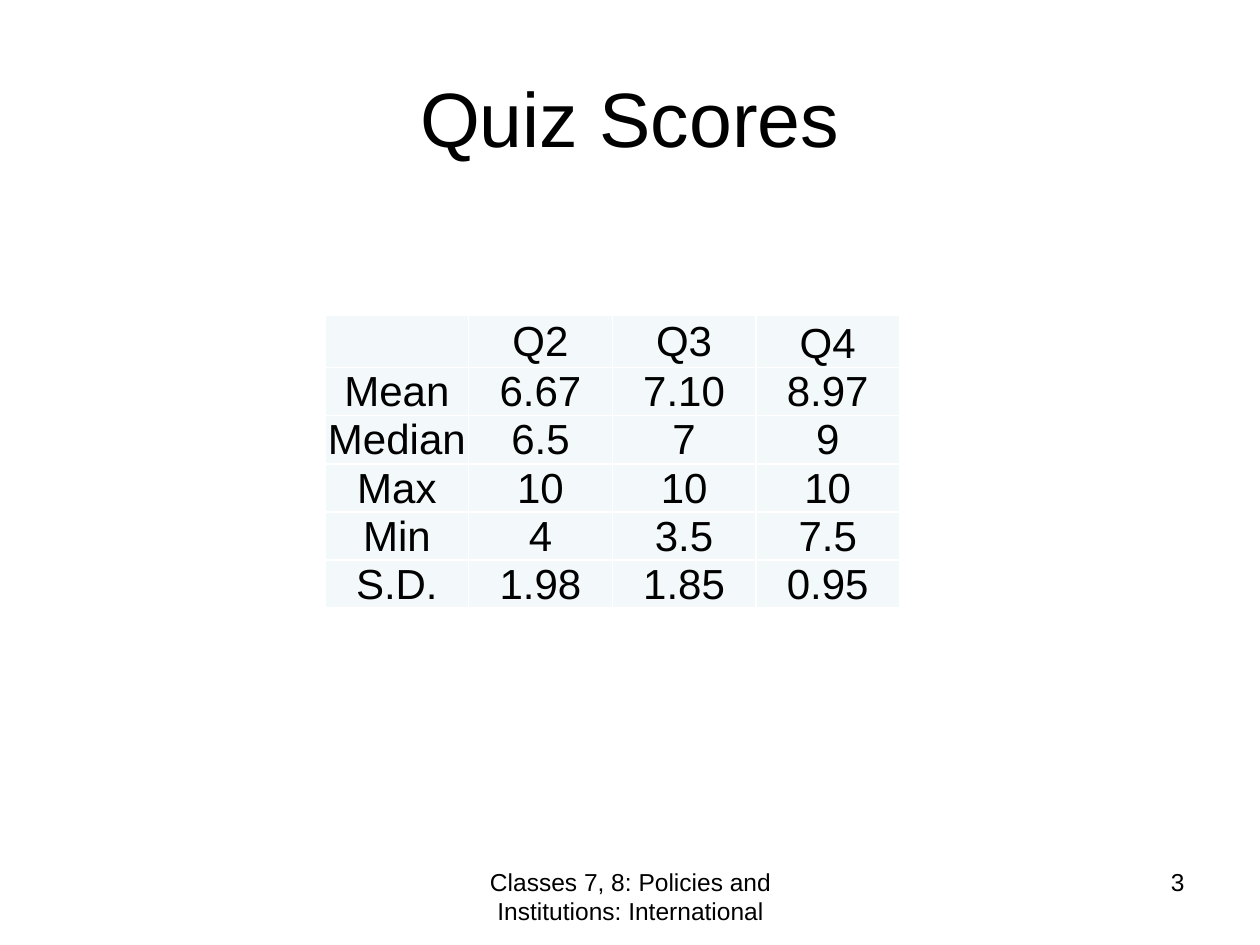
"""Build the quiz scores slide with its statistics table."""
from dataclasses import dataclass

from pptx import Presentation
from pptx.dml.color import RGBColor
from pptx.enum.text import MSO_ANCHOR as Anchor, PP_ALIGN as Align
from pptx.oxml import parse_xml
from pptx.oxml.ns import nsdecls
from pptx.util import Inches, Pt

TITLE = "Quiz Scores"
FOOTER = "Classes 7, 8: Policies and Institutions: International"
SLIDE_NUMBER = "3"
SCORES = [
    ("", "Q2", "Q3", "Q4"),
    ("Mean", "6.67", "7.10", "8.97"),
    ("Median", "6.5", "7", "9"),
    ("Max", "10", "10", "10"),
    ("Min", "4", "3.5", "7.5"),
    ("S.D.", "1.98", "1.85", "0.95"),
]


@dataclass(frozen=True)
class Theme:
    font: str = "Arial"
    text: str = "000000"
    cell: str = "F3F9FA"
    border: str = "FFFFFF"
    title_size: int = 44
    table_size: int = 24
    footer_size: int = 14


THEME = Theme()
TABLE_LEFT, TABLE_TOP = 2.58, 2.5
COLUMN_WIDTH, ROW_HEIGHT = 1.14, 0.38
FOOTER_TOP, FOOTER_HEIGHT = 6.83, 0.52


def write_text(frame, text, size, align=Align.CENTER):
    paragraph = frame.paragraphs[0]
    paragraph.alignment = align
    paragraph.font.size = Pt(size)
    if text:
        run = paragraph.add_run()
        run.text = text
        run.font.name = THEME.font
        run.font.size = Pt(size)
        run.font.color.rgb = RGBColor.from_string(THEME.text)


def place(shape, left, top, width, height):
    shape.left, shape.top = Inches(left), Inches(top)
    shape.width, shape.height = Inches(width), Inches(height)


def add_footer(slide, text, left, width, align):
    box = slide.shapes.add_textbox(
        Inches(left), Inches(FOOTER_TOP), Inches(width), Inches(FOOTER_HEIGHT))
    box.text_frame.word_wrap = True
    write_text(box.text_frame, text, THEME.footer_size, align)


def format_cell(cell, anchor):
    cell.vertical_anchor = anchor
    cell.margin_left = cell.margin_right = cell.margin_top = Inches(0.01)
    cell.margin_bottom = 0
    properties = cell._tc.get_or_add_tcPr()
    for side in ("lnL", "lnR", "lnT", "lnB"):
        properties.append(parse_xml(
            f'<a:{side} {nsdecls("a")} w="{Pt(1)}"><a:solidFill>'
            f'<a:srgbClr val="{THEME.border}"/></a:solidFill></a:{side}>'))
    cell.fill.solid()
    cell.fill.fore_color.rgb = RGBColor.from_string(THEME.cell)


def add_scores(slide):
    row_count, column_count = len(SCORES), len(SCORES[0])
    table = slide.shapes.add_table(
        row_count, column_count, Inches(TABLE_LEFT), Inches(TABLE_TOP),
        Inches(COLUMN_WIDTH * column_count), Inches(ROW_HEIGHT * row_count)).table
    table.first_row = table.horz_banding = False
    for column in table.columns:
        column.width = Inches(COLUMN_WIDTH)
    for row_index, values in enumerate(SCORES):
        table.rows[row_index].height = Inches(ROW_HEIGHT)
        for column_index, value in enumerate(values):
            cell = table.cell(row_index, column_index)
            centred = row_index == 0 and column_index < column_count - 1
            format_cell(cell, Anchor.MIDDLE if centred else Anchor.BOTTOM)
            write_text(cell.text_frame, value, THEME.table_size)


def main():
    presentation = Presentation()
    presentation.slide_width, presentation.slide_height = Inches(10), Inches(7.5)
    slide = presentation.slides.add_slide(presentation.slide_layouts[5])
    title = slide.shapes.title
    place(title, 0.5, 0.3, 9, 1.25)
    title.text_frame.vertical_anchor = Anchor.MIDDLE
    write_text(title.text_frame, TITLE, THEME.title_size)
    add_scores(slide)
    add_footer(slide, FOOTER, 3.42, 3.17, Align.CENTER)
    add_footer(slide, SLIDE_NUMBER, 7.17, 2.33, Align.RIGHT)
    presentation.save("out.pptx")


if __name__ == "__main__":
    main()
